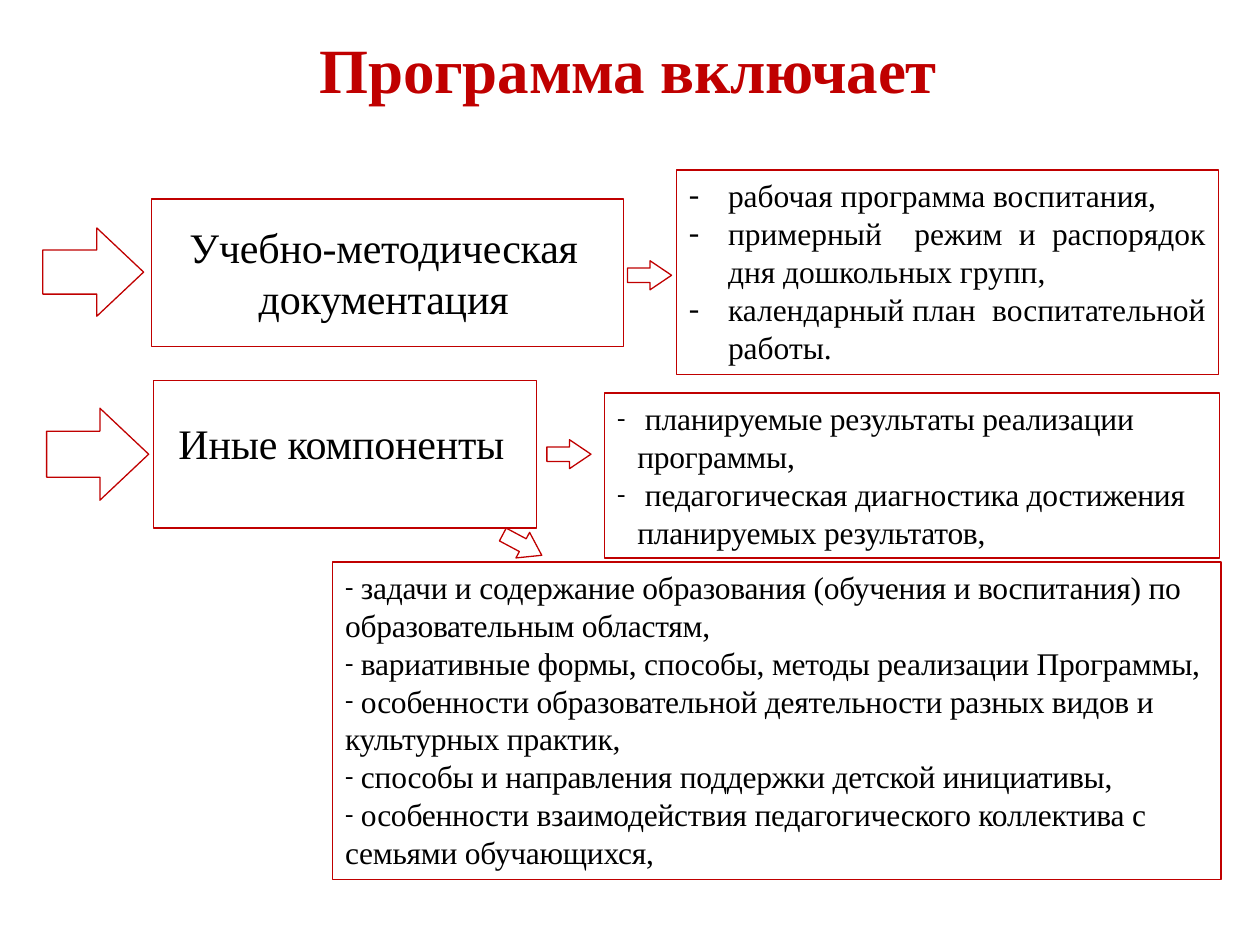
from pptx import Presentation
from pptx.dml.color import RGBColor
from pptx.enum.shapes import MSO_SHAPE
from pptx.enum.text import MSO_ANCHOR, MSO_AUTO_SIZE, PP_ALIGN
from pptx.oxml.ns import qn
from pptx.util import Emu, Inches, Pt

RECT = MSO_SHAPE.RECTANGLE
ARROW = MSO_SHAPE.RIGHT_ARROW
TOP = MSO_ANCHOR.TOP
NO_FIT = MSO_AUTO_SIZE.NONE
LEFT, CENTER, JUSTIFY = PP_ALIGN.LEFT, PP_ALIGN.CENTER, PP_ALIGN.JUSTIFY
RED = RGBColor(0xC0, 0x00, 0x00)
BLACK = RGBColor(0x00, 0x00, 0x00)
COLS, ROWS = 100, 75

DOCUMENTS = [
    "рабочая программа воспитания,",
    "примерный  режим и распорядок дня дошкольных групп,",
    "календарный план  воспитательной работы.",
]
RESULTS = [
    " планируемые результаты реализации программы,",
    " педагогическая диагностика достижения планируемых результатов,",
]
COMPONENTS = [
    " задачи и содержание образования (обучения и воспитания) по образовательным областям,",
    " вариативные формы, способы, методы реализации Программы,",
    " особенности образовательной деятельности разных видов и культурных практик,",
    " способы и направления поддержки детской инициативы,",
    " особенности взаимодействия педагогического коллектива с семьями обучающихся,",
]


class Deck:
    font = "Times New Roman"
    line_width = Pt(0.75)

    def __init__(self, width, height):
        self.prs = Presentation()
        self.prs.slide_width, self.prs.slide_height = width, height
        self.col, self.row = width / COLS, height / ROWS
        self.s = self.prs.slides.add_slide(self.prs.slide_layouts[5])

    def area(self, x, y, w, h):
        return (Emu(round(x * self.col)), Emu(round(y * self.row)),
                Emu(round(w * self.col)), Emu(round(h * self.row)))

    def fill_paragraph(self, p, text, size, color, align, spacing, bold=False):
        p.alignment = align
        p.font.name, p.font.size = self.font, Pt(size)
        p.font.bold, p.font.color.rgb = bold, color
        r = p.add_run()
        r.text = text
        r._r.get_or_add_rPr().set("spc", str(spacing))

    def plain(self, sp, text, size, color, bold=False):
        tf = sp.text_frame
        tf.word_wrap, tf.auto_size, tf.vertical_anchor = True, NO_FIT, TOP
        tf.margin_left = tf.margin_right = tf.margin_bottom = 0
        tf.margin_top = Inches(0.01)
        p = tf.paragraphs[0]
        p.space_before = Pt(1)
        self.fill_paragraph(p, text, size, color, CENTER, -10, bold)

    def title(self, text, *grid):
        sp = self.s.shapes.title
        sp.left, sp.top, sp.width, sp.height = self.area(*grid)
        self.plain(sp, text, 36, RED, True)

    def label(self, text, *grid):
        self.plain(self.s.shapes.add_textbox(*self.area(*grid)), text, 24, BLACK)

    def outline(self, kind, *grid):
        sp = self.s.shapes.add_shape(kind, *self.area(*grid))
        sp.shadow.inherit = False
        sp.fill.background()
        sp.line.color.rgb, sp.line.width = RED, self.line_width
        return sp

    def arrow(self, *grid, head=0.53, angle=0):
        sp = self.outline(ARROW, *grid)
        sp.adjustments[0], sp.adjustments[1] = 0.5, head
        sp.rotation = angle

    def bullets(self, items, *grid, indent=0, align=LEFT, scale=80, spacing=-15):
        tf = self.outline(RECT, *grid).text_frame
        tf.word_wrap, tf.vertical_anchor = True, TOP
        for i, item in enumerate(items):
            p = tf.add_paragraph() if i else tf.paragraphs[0]
            self.fill_paragraph(p, item, 18, BLACK, align, spacing)
            pPr = p._p.get_or_add_pPr()
            pPr.set("marL", str(Inches(indent)))
            pPr.set("indent", str(-Inches(indent)))
            marks = [("a:buSzPct", "val", str(scale * 1000)),
                     ("a:buFont", "typeface", self.font),
                     ("a:buChar", "char", "-")]
            for at, (tag, key, value) in enumerate(marks):
                mark = pPr.makeelement(qn(tag), {key: value})
                pPr.insert(at, mark)


def main():
    d = Deck(Inches(10), Inches(7.5))
    d.title("Программа включает", 19.5, 2.3, 60.7, 6.2)
    d.outline(RECT, 12, 15.8, 37.5, 11.7)
    d.outline(RECT, 12.2, 30.2, 30.4, 11.7)
    d.arrow(3.4, 18.1, 8, 7)
    d.arrow(3.7, 32.4, 8.1, 7.3)
    d.label("Учебно-методическая документация", 13.9, 17.5, 33.1, 8.2)
    d.label("Иные компоненты", 13.5, 33, 27.2, 4.2)
    d.bullets(DOCUMENTS, 53.7, 13.5, 43, 16.2,
              indent=0.31, align=JUSTIFY, scale=100, spacing=0)
    d.bullets(RESULTS, 48, 31.2, 48.8, 13.1, indent=0.16)
    d.bullets(COMPONENTS, 26.4, 44.6, 70.5, 25.2)
    for x, y, angle in [(49.8, 20.7, 0), (43.4, 34.9, 0), (39.7, 42.1, 28.1)]:
        d.arrow(x, y, 3.5, 2.3, head=0.74, angle=angle)
    d.prs.save("out.pptx")


if __name__ == "__main__":
    main()
